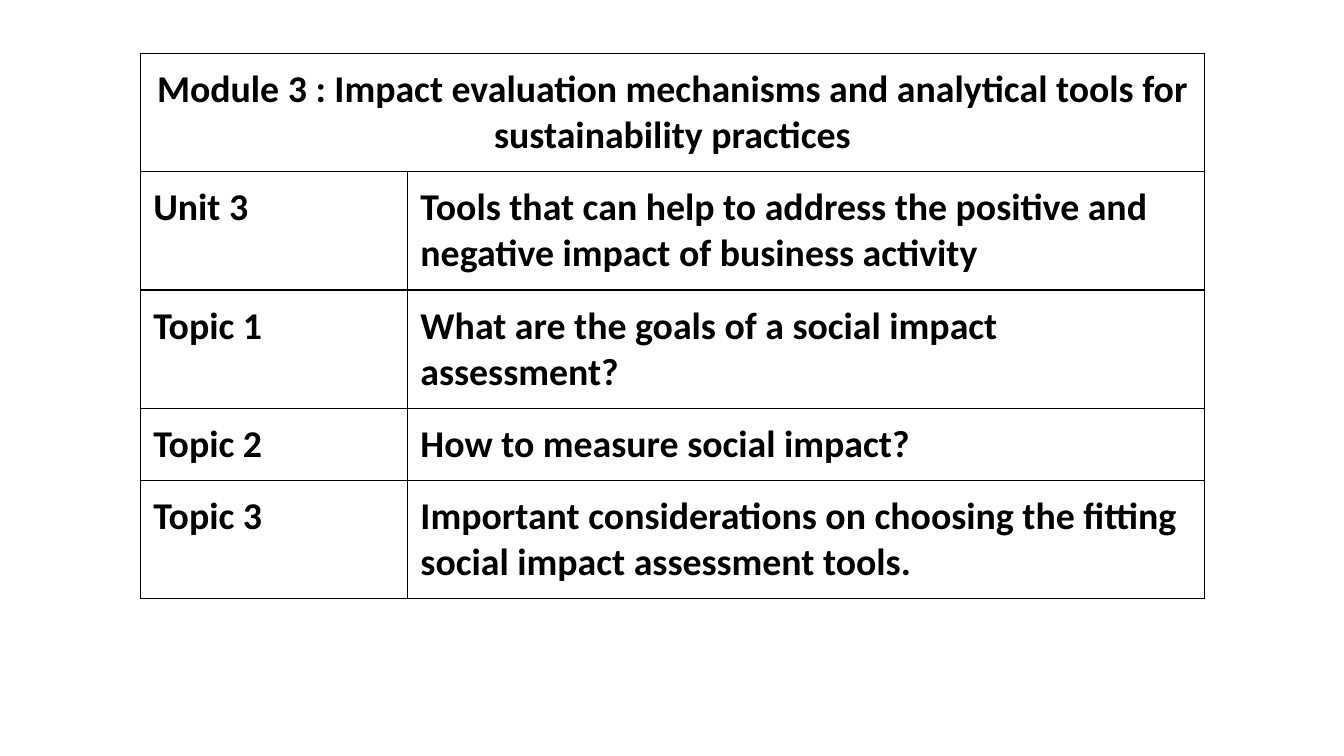
from dataclasses import dataclass

import pptx
import pptx.dml.color
import pptx.enum.text
import pptx.oxml
import pptx.oxml.ns
import pptx.table
import pptx.util
from pptx.util import Inches

BLACK = pptx.dml.color.RGBColor(0x00, 0x00, 0x00)
WHITE = pptx.dml.color.RGBColor(0xFF, 0xFF, 0xFF)
FONT = "Calibri"
TEXT_SIZE = pptx.util.Pt(27)
BORDER_WIDTH = pptx.util.Pt(1)
CELL_MARGIN = Inches(0.13)
COLUMN_WIDTHS = (2.65, 7.91)
BLANK_LAYOUT = 6


@dataclass
class OutlineRow:
    label: str
    text: str = ""
    height: float = 1.16


OUTLINE = [
    OutlineRow("Module 3 : Impact evaluation mechanisms and analytical tools for "
               "sustainability practices"),
    OutlineRow("Unit 3", "Tools that can help to address the positive and negative "
                         "impact of business activity"),
    OutlineRow("Topic 1", "What are the goals of a social impact assessment?"),
    OutlineRow("Topic 2", "How to measure social impact?", height=0.71),
    OutlineRow("Topic 3", "Important considerations on choosing the fitting social "
                          "impact assessment tools."),
]


def add_borders(cell: pptx.table._Cell) -> None:
    """Draw a thin solid line on all four sides of a cell."""
    properties = cell._tc.get_or_add_tcPr()
    for side in ("lnL", "lnR", "lnT", "lnB"):
        properties.append(pptx.oxml.parse_xml(
            f'<a:{side} {pptx.oxml.ns.nsdecls("a")} w="{BORDER_WIDTH}">'
            f'<a:solidFill><a:srgbClr val="{BLACK}"/></a:solidFill></a:{side}>'))


def format_cell(cell: pptx.table._Cell, text: str) -> None:
    """Write the text of a cell and give it the shared look."""
    add_borders(cell)
    cell.fill.solid()
    cell.fill.fore_color.rgb = WHITE
    cell.margin_left = cell.margin_right = CELL_MARGIN
    cell.margin_top = cell.margin_bottom = CELL_MARGIN
    cell.text_frame.text = text
    font = cell.text_frame.paragraphs[0].font
    for span in cell.text_frame.paragraphs[0].runs:
        font = span.font
    font.name = FONT
    font.size = TEXT_SIZE
    font.bold = True
    font.color.rgb = BLACK


def add_outline_table(page: pptx.slide.Slide) -> None:
    """Add the module outline, with its first row merged into a heading."""
    frame = page.shapes.add_table(
        len(OUTLINE), len(COLUMN_WIDTHS), Inches(1.39), Inches(0.53),
        Inches(sum(COLUMN_WIDTHS)), Inches(sum(row.height for row in OUTLINE)))
    table = frame.table
    table.first_row = table.horz_banding = False
    for column, width in zip(table.columns, COLUMN_WIDTHS):
        column.width = Inches(width)
    for table_row, row in zip(table.rows, OUTLINE):
        table_row.height = Inches(row.height)
        for cell, text in zip(table_row.cells, (row.label, row.text)):
            format_cell(cell, text)

    # Module heading across both columns
    heading = table.cell(0, 0)
    heading.merge(table.cell(0, 1))
    heading.text_frame.paragraphs[0].alignment = pptx.enum.text.PP_ALIGN.CENTER


def main() -> None:
    deck = pptx.Presentation()
    deck.slide_width = Inches(13.33)
    deck.slide_height = Inches(7.5)
    page = deck.slides.add_slide(deck.slide_layouts[BLANK_LAYOUT])
    add_outline_table(page)
    deck.save("out.pptx")


if __name__ == "__main__":
    main()
